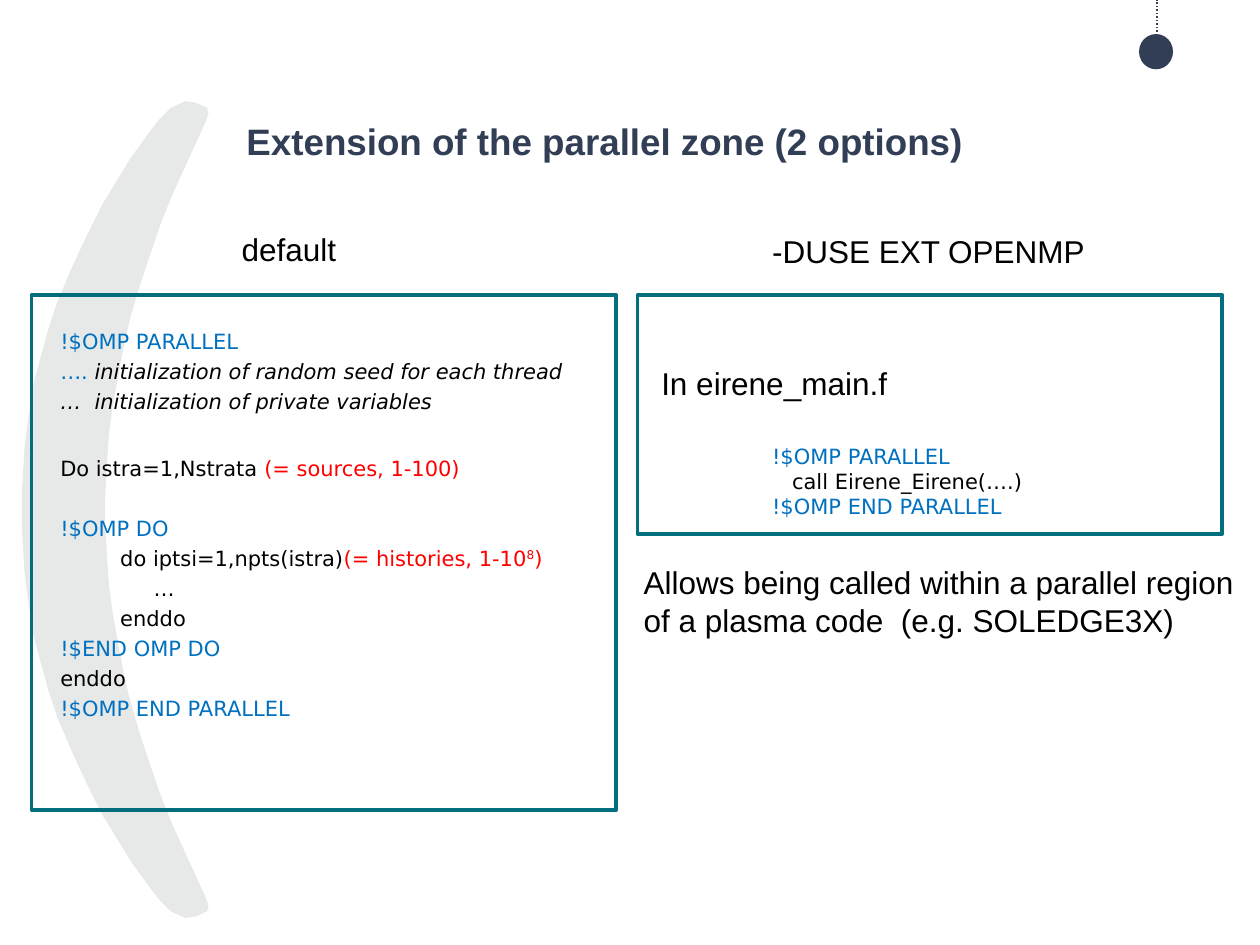
"""Build the slide that compares the two options for the parallel zone."""
from lxml import etree
from pptx import Presentation
from pptx import util as u
from pptx.dml.color import RGBColor
from pptx.enum import dml, shapes, text
from pptx.oxml.ns import qn

Inches, Pt = u.Inches, u.Pt
NAVY = RGBColor(0x31, 0x3E, 0x56)
GREY = RGBColor(0xE7, 0xE8, 0xE8)
TEAL = RGBColor(0x03, 0x6F, 0x7E)
BLUE = RGBColor(0x00, 0x70, 0xC0)
RED = RGBColor(0xFF, 0x00, 0x00)
BLACK = RGBColor(0x00, 0x00, 0x00)

HEADING = {"name": "Arial", "size": Pt(21), "bold": True, "color": NAVY}
LABEL = {"name": "Arial", "size": Pt(18), "color": BLACK}
CODE = {"name": "DejaVu Sans", "size": Pt(12), "color": BLACK}
DIRECTIVE = {**CODE, "color": BLUE}
COUNT = {**CODE, "color": RED}
REMARK = {**CODE, "italic": True}

MIRROR_SUM = 809
OUTER_ARC = [(165, 90), (164, 86), (155, 82), (147, 81), (136, 86), (127, 95),
             (120, 104), (112, 115), (104, 126), (95, 141), (82, 162), (69, 188),
             (57, 214), (46, 240), (39, 261), (33, 283), (27, 305), (23, 332),
             (20, 356), (18, 390)]
INNER_ARC = [(83, 393), (84, 375), (86, 345), (89, 322), (93, 300), (98, 273),
             (103, 252), (111, 225), (119, 201), (128, 175), (137, 153),
             (147, 131), (158, 107), (163, 96)]


class SlideBuilder:
    """Hold the style and the current slide."""

    def __init__(self, slide, line_color, line_width):
        self.slide = slide
        self.line_color = line_color
        self.line_width = line_width

    def add_runs(self, paragraph, runs):
        for words, style in runs:
            run = paragraph.add_run()
            run.text = words
            for key, value in style.items():
                if key == "color":
                    run.font.color.rgb = value
                elif key == "baseline":
                    run._r.get_or_add_rPr().set(key, value)
                else:
                    setattr(run.font, key, value)

    def title(self, words, box):
        heading = self.slide.shapes.title
        heading.left, heading.top, heading.width, heading.height = map(Inches, box)
        frame = heading.text_frame
        margins = dict.fromkeys(
            ("margin_left", "margin_top", "margin_right", "margin_bottom"), 0)
        for key, value in {**margins, "vertical_anchor": text.MSO_ANCHOR.TOP}.items():
            setattr(frame, key, value)
        frame.paragraphs[0].alignment = text.PP_ALIGN.CENTER
        self.add_runs(frame.paragraphs[0], [(words, HEADING)])

    def text(self, box, lines, gap=0, wider_gaps=None):
        frame = self.slide.shapes.add_textbox(*map(Inches, box)).text_frame
        frame.word_wrap = True
        for index, runs in enumerate(lines):
            paragraph = frame.paragraphs[0]
            if index:
                paragraph = frame.add_paragraph()
                paragraph.space_before = Pt((wider_gaps or {}).get(index, gap))
            self.add_runs(paragraph, runs)

    def paint(self, shape, color):
        shape.shadow.inherit = False
        shape.fill.solid()
        shape.fill.fore_color.rgb = color
        shape.line.color.rgb = color
        shape.line.width = Pt(0.75)

    def frame(self, box):
        border = self.slide.shapes.add_shape(
            shapes.MSO_SHAPE.RECTANGLE, *map(Inches, box))
        border.shadow.inherit = False
        border.fill.background()
        border.line.color.rgb = self.line_color
        border.line.width = self.line_width

    def disc(self, box, color):
        dot = self.slide.shapes.add_shape(shapes.MSO_SHAPE.OVAL, *map(Inches, box))
        self.paint(dot, color)
        dot.line.fill.background()

    def crescent(self, outer, inner, color):
        def mirror(arc):
            return [(x, MIRROR_SUM - y) for x, y in reversed(arc)]

        points = outer + mirror(outer) + mirror(inner) + inner
        builder = self.slide.shapes.build_freeform(*points[0], scale=Inches(0.01))
        builder.add_line_segments(points[1:], close=True)
        self.paint(builder.convert_to_shape(), color)

    def dotted_line(self, start, end, color):
        thread = self.slide.shapes.add_connector(
            shapes.MSO_CONNECTOR.STRAIGHT, *map(Inches, start + end))
        thread.line.color.rgb = color
        thread.line.width = Pt(1)
        thread.line.dash_style = dml.MSO_LINE.ROUND_DOT
        etree.SubElement(thread._element.spPr, qn("a:effectLst"))


def main():
    deck = Presentation()
    deck.slide_width, deck.slide_height = Inches(10), Inches(7.5)
    slide = deck.slides.add_slide(deck.slide_layouts[5])
    builder = SlideBuilder(slide, TEAL, Pt(2))

    builder.crescent(OUTER_ARC, INNER_ARC, GREY)
    builder.disc((9.04, 0.27, 0.27, 0.28), NAVY)
    builder.dotted_line((9.18, 0.28), (9.18, 0), NAVY)
    builder.title("Extension of the parallel zone (2 options)", (0.49, 0.94, 8.62, 1.09))

    default_code = [
        [("!$OMP PARALLEL", DIRECTIVE)],
        [("…. ", DIRECTIVE), ("initialization of random seed for each thread", REMARK)],
        [("…  initialization of private variables", REMARK)],
        [("Do istra=1,Nstrata ", CODE), ("(= sources, 1-100)", COUNT)],
        [("!$OMP DO", DIRECTIVE)],
        [("         do iptsi=1,npts(istra)", CODE), ("(= histories, 1-10", COUNT),
         ("8", {**COUNT, "baseline": "30000"}), (")", COUNT)],
        [("              …", CODE)],
        [("         enddo", CODE)],
        [("!$END OMP DO", DIRECTIVE)],
        [("enddo", CODE)],
        [("!$OMP END PARALLEL", DIRECTIVE)],
    ]
    builder.text((0.38, 2.56, 6.75, 3.71), default_code, 2.8, {3: 23.7, 4: 19.6})
    builder.text((6.03, 3.47, 2.24, 0.91), [
        [("!$OMP PARALLEL", DIRECTIVE)],
        [("   call Eirene_Eirene(….)", CODE)],
        [("!$OMP END PARALLEL", DIRECTIVE)],
    ])
    for left, height in ((0.25, 4.09), (5.06, 1.9)):
        builder.frame((left, 2.34, 4.64, height))

    labels = [
        ((1.82, 1.78, 1, 0.4), ["default"]),
        ((6.03, 1.79, 2.77, 0.4), ["-DUSE EXT OPENMP"]),
        ((5.15, 2.84, 2.1, 0.4), ["In eirene_main.f"]),
        ((5.01, 4.42, 4.99, 1.01), ["Allows being called within a parallel region",
                                    "of a plasma code  (e.g. SOLEDGE3X)"]),
    ]
    for box, lines in labels:
        builder.text(box, [[(line, LABEL)] for line in lines])

    deck.save("out.pptx")


if __name__ == "__main__":
    main()
